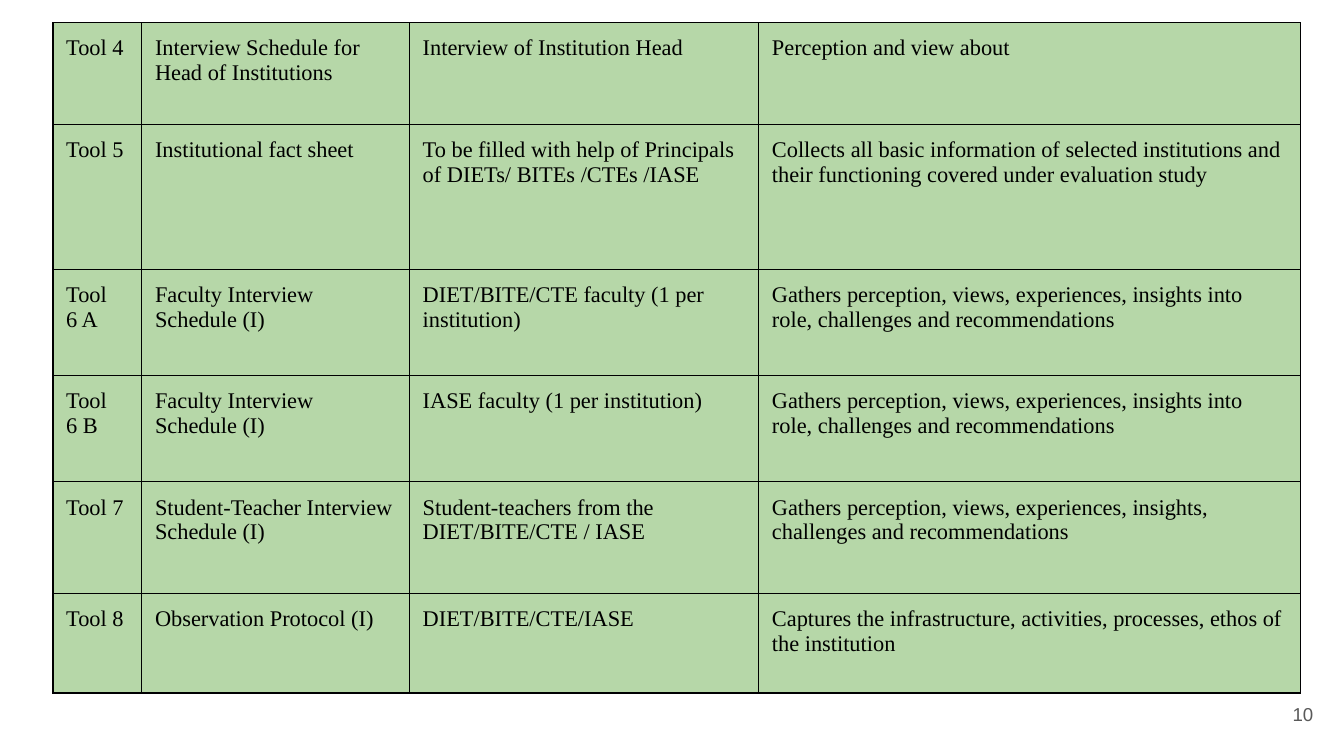
from lxml import etree
from pptx import Presentation
from pptx.dml.color import RGBColor
from pptx.enum import text
from pptx.oxml import ns
from pptx.util import Cm, Pt

FACULTY_PURPOSE = ("Gathers perception, views, experiences, insights into role, "
                   "challenges and recommendations")
TOOLS = [
    ("Tool 4", "Interview Schedule for Head of Institutions",
     "Interview of Institution Head", "Perception and view about"),
    ("Tool 5", "Institutional fact sheet",
     "To be filled with help of Principals of DIETs/ BITEs /CTEs /IASE",
     "Collects all basic information of selected institutions and their "
     "functioning covered under evaluation study"),
    ("Tool\n6 A", "Faculty Interview Schedule (I)",
     "DIET/BITE/CTE faculty (1 per institution)", FACULTY_PURPOSE),
    ("Tool\n6 B", "Faculty Interview Schedule (I)",
     "IASE faculty (1 per institution)", FACULTY_PURPOSE),
    ("Tool 7", "Student-Teacher Interview Schedule (I)",
     "Student-teachers from the DIET/BITE/CTE / IASE",
     "Gathers perception, views, experiences, insights, challenges and "
     "recommendations"),
    ("Tool 8", "Observation Protocol (I)", "DIET/BITE/CTE/IASE",
     "Captures the infrastructure, activities, processes, ethos of the "
     "institution"),
]
PAGE_NUMBER = "10"

COLUMN_WIDTHS = [1.68, 5.06, 6.6, 10.24]
ROW_HEIGHTS = [1.92, 2.74, 2.01, 2.01, 2.11, 1.88]
MARGIN = Cm(0.25)


def color(hex_value):
    return RGBColor.from_string(hex_value)


def format_text(frame, font_name, size, hex_value):
    for paragraph in frame.paragraphs:
        for run in paragraph.runs:
            run.font.name = font_name
            run.font.size = Pt(size)
            run.font.color.rgb = color(hex_value)


def set_margins(target):
    target.margin_left = target.margin_right = MARGIN
    target.margin_top = target.margin_bottom = MARGIN


def add_borders(cell, hex_value, width):
    """Draw all four sides; call before filling, as the lines come first in tcPr."""
    properties = cell._tc.get_or_add_tcPr()
    for side in ("a:lnL", "a:lnR", "a:lnT", "a:lnB"):
        line = etree.SubElement(properties, ns.qn(side), w=str(Pt(width)))
        fill = etree.SubElement(line, ns.qn("a:solidFill"))
        etree.SubElement(fill, ns.qn("a:srgbClr"), val=hex_value)


def add_tools_table(slide):
    table = slide.shapes.add_table(
        len(TOOLS), len(COLUMN_WIDTHS), Cm(1), Cm(0.43),
        Cm(sum(COLUMN_WIDTHS)), Cm(sum(ROW_HEIGHTS))).table
    table.first_row = table.horz_banding = False
    for column, width in zip(table.columns, COLUMN_WIDTHS):
        column.width = Cm(width)
    for row, height, tool in zip(table.rows, ROW_HEIGHTS, TOOLS):
        row.height = Cm(height)
        for cell, content in zip(row.cells, tool):
            set_margins(cell)
            add_borders(cell, "000001", 0.75)
            cell.fill.solid()
            cell.fill.fore_color.rgb = color("B6D7A8")
            cell.text_frame.text = content
            format_text(cell.text_frame, "Times New Roman", 12, "000000")


def add_page_number(slide):
    frame = slide.shapes.add_textbox(
        Cm(23.55), Cm(12.95), Cm(1.52), Cm(1.09)).text_frame
    frame.word_wrap = True
    frame.vertical_anchor = text.MSO_ANCHOR.MIDDLE
    set_margins(frame)
    frame.text = PAGE_NUMBER
    frame.paragraphs[0].alignment = text.PP_ALIGN.RIGHT
    format_text(frame, "Arial", 10, "595959")


def main():
    deck = Presentation()
    deck.slide_width, deck.slide_height = Cm(25.4), Cm(14.29)
    slide = deck.slides.add_slide(deck.slide_layouts[6])
    add_tools_table(slide)
    add_page_number(slide)
    deck.save("out.pptx")


if __name__ == "__main__":
    main()
